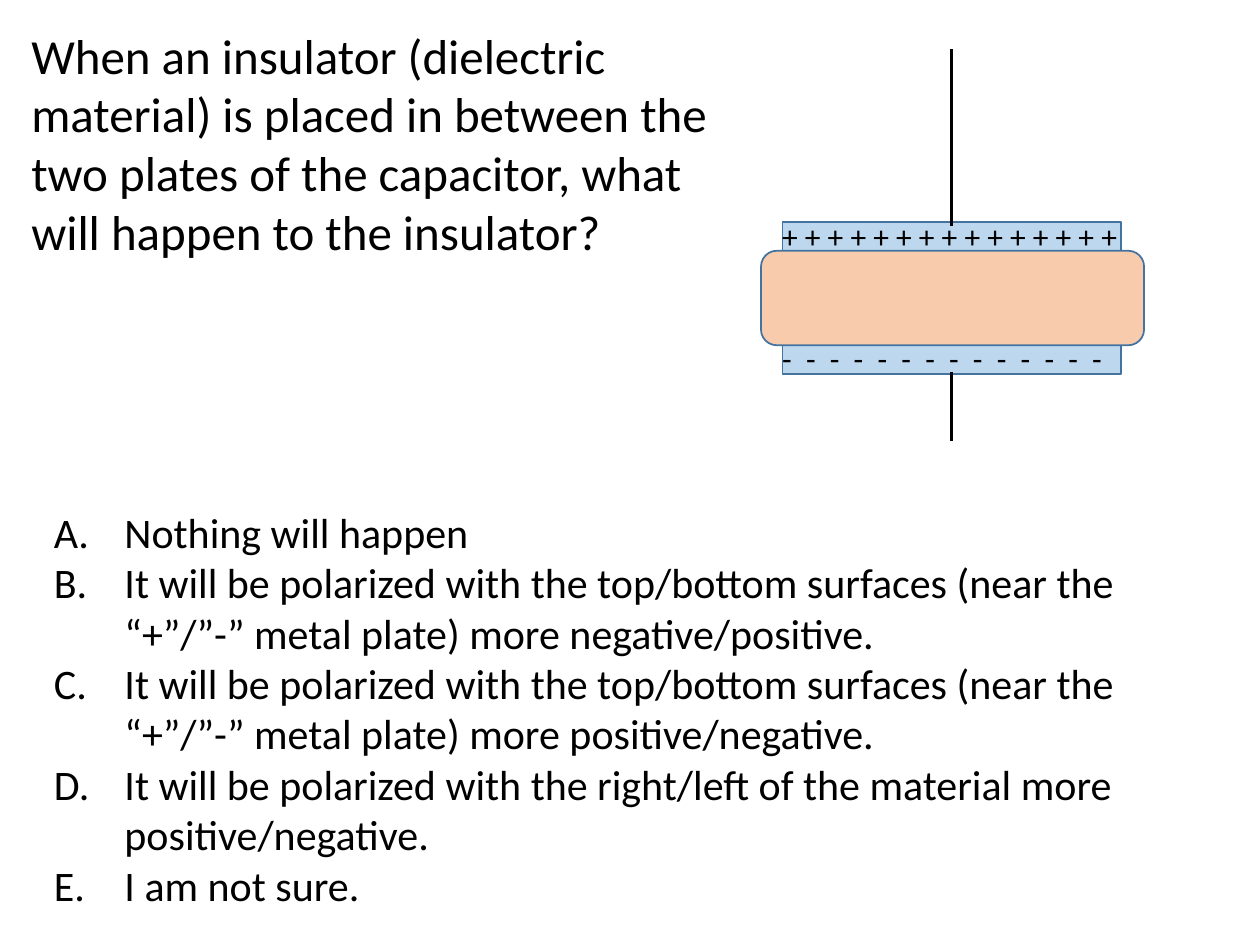
from pptx import Presentation
from pptx import util as u
from pptx.dml.color import RGBColor
from pptx.enum import shapes, text
from pptx.oxml.ns import qn
from lxml import etree

SCALE = 9144
FONT = "Calibri"
INK = "000000"
PLATE = "BDD7EE"
INSULATOR = "F8CBAD"
EDGE = "43739E"

QUESTION = (
    "When an insulator (dielectric material) is placed in between the two "
    "plates of the capacitor, what will happen to the insulator?"
)
SURFACES = (
    "It will be polarized with the top/bottom surfaces "
    "(near the “+”/”-” metal plate) more {}."
)
ANSWERS = [
    "Nothing will happen",
    SURFACES.format("negative/positive"),
    SURFACES.format("positive/negative"),
    "It will be polarized with the right/left of the material more "
    "positive/negative.",
    "I am not sure.",
]


def px(n):
    return u.Emu(n * SCALE)


def color(value):
    return RGBColor.from_string(value)


def add_text(s, box, lines, size, wrap=True):
    sp = s.shapes.add_textbox(*map(px, box))
    tf = sp.text_frame
    tf.word_wrap = wrap
    tf.auto_size = text.MSO_AUTO_SIZE.SHAPE_TO_FIT_TEXT
    tf.text = "\n".join(lines)
    for p in tf.paragraphs:
        for r in p.runs:
            r.font.name = FONT
            r.font.size = u.Pt(size)
            r.font.color.rgb = color(INK)
    return tf


def add_block(s, kind, box, fill):
    sp = s.shapes.add_shape(kind, *map(px, box))
    sp.shadow.inherit = False
    sp.fill.solid()
    sp.fill.fore_color.rgb = color(fill)
    sp.line.color.rgb = color(EDGE)
    sp.line.width = u.Pt(1)


def add_wire(s, x, top, bottom):
    c = s.shapes.add_connector(
        shapes.MSO_CONNECTOR.STRAIGHT, px(x), px(top), px(x), px(bottom)
    )
    c.line.color.rgb = color(INK)
    c.line.width = u.Pt(1.75)
    etree.SubElement(c._element.spPr, qn("a:effectLst"))


def add_question(s, box):
    add_text(s, box, [QUESTION], 28)


def add_capacitor(s, box):
    x, y, w, h = box
    plate_w, plate_h, gap = 269, 23, 75
    plate_x = x + (w - plate_w) // 2
    top = y + 137
    middle = top + plate_h
    bottom = middle + gap
    for plate_y in (top, bottom):
        add_block(s, shapes.MSO_SHAPE.RECTANGLE,
                  (plate_x, plate_y, plate_w, plate_h), PLATE)
    wire_x = x + w // 2 - 1
    add_wire(s, wire_x, y, top + 3)
    add_wire(s, wire_x, bottom + plate_h - 2, y + h)
    add_text(s, (x + 7, top - 9, 296, 40), [" ".join("+" * 15)], 18, False)
    tf = add_text(s, (x + 7, bottom - 10, 298, 40),
                  [" ".join("-" * 14)], 18, False)
    tf.paragraphs[0].runs[0]._r.get_or_add_rPr().set("spc", "203")
    add_block(s, shapes.MSO_SHAPE.ROUNDED_RECTANGLE,
              (x, middle, w, gap), INSULATOR)


def add_answers(s, box):
    tf = add_text(s, box, ANSWERS, 24)
    for p in tf.paragraphs:
        pPr = p._p.get_or_add_pPr()
        pPr.set("marL", str(px(56)))
        pPr.set("indent", str(px(-56)))
        etree.SubElement(pPr, qn("a:buFont"), typeface="+mj-lt")
        etree.SubElement(pPr, qn("a:buAutoNum"), type="alphaUcPeriod")


def main():
    prs = Presentation()
    prs.slide_width, prs.slide_height = px(1000), px(750)
    s = prs.slides.add_slide(prs.slide_layouts[6])
    add_question(s, (15, 15, 588, 199))
    add_capacitor(s, (604, 39, 304, 311))
    add_answers(s, (33, 397, 874, 333))
    prs.save("out.pptx")


if __name__ == "__main__":
    main()
